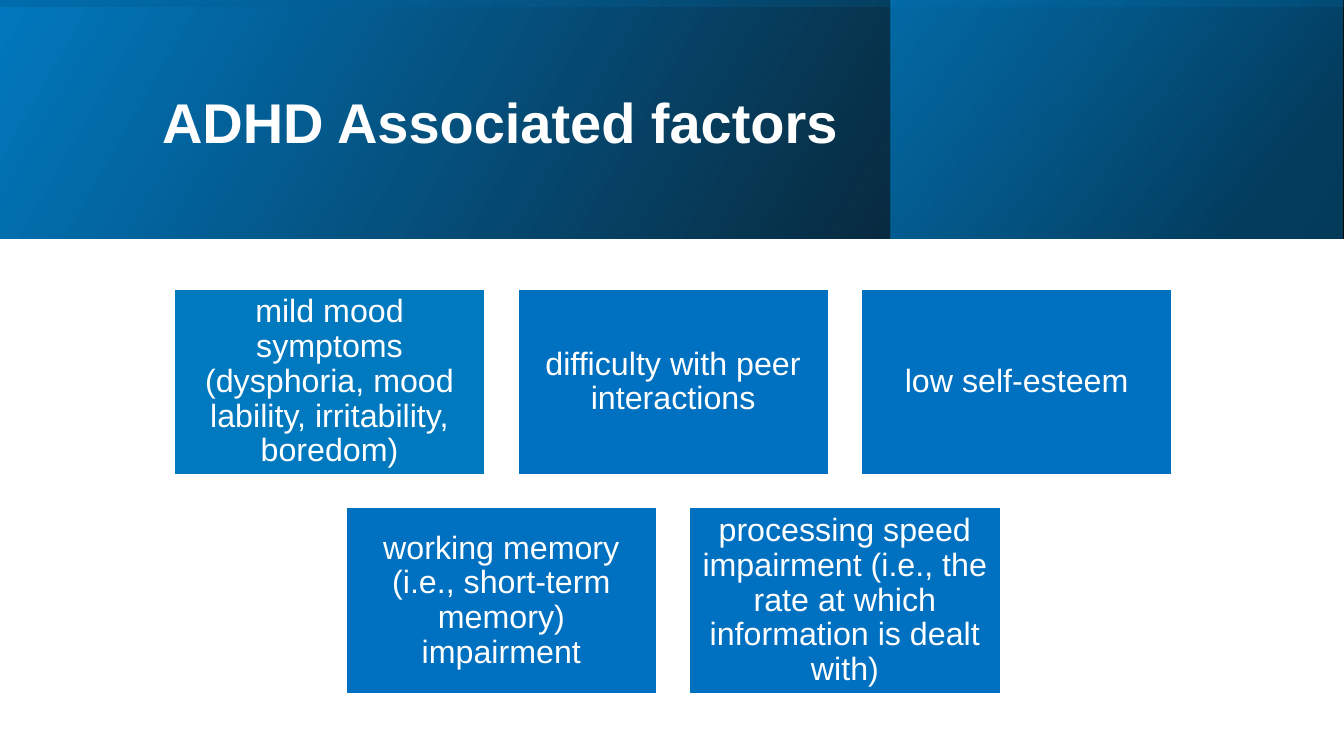
from pptx import Presentation
from pptx.dml.color import RGBColor
from pptx.enum.shapes import MSO_SHAPE
from pptx.enum.text import MSO_ANCHOR, PP_ALIGN
from pptx.oxml.ns import qn
from pptx.util import Pt
from lxml.etree import SubElement


def color(code):
    return RGBColor.from_string(code)


class Deck:
    """Holds the style and the current slide."""

    font = "Arial"
    white = "FFFFFF"

    def __init__(self, wide, high):
        self.prs = Presentation()
        self.prs.slide_width, self.prs.slide_height = Pt(wide), Pt(high)
        self.slide = self.prs.slides.add_slide(self.prs.slide_layouts[6])

    def rect(self, *area):
        shape = self.slide.shapes.add_shape(MSO_SHAPE.RECTANGLE, *map(Pt, area))
        shape.shadow.inherit = False
        return shape

    def band(self, area, angle, stops, turn=0):
        shape = self.rect(*area)
        shape.rotation = turn
        shape.line.fill.background()
        shape.fill.gradient()
        shape.fill.gradient_angle = 360 - angle
        props = shape._element.spPr
        props.find(qn("a:xfrm")).set("flipH", "1")
        for stop, (place, code, _) in zip(shape.fill.gradient_stops, stops):
            stop.position = place / 100
            stop.color.rgb = color(code)
        for node, (_, _, alpha) in zip(props.iter(qn("a:srgbClr")), stops):
            SubElement(node, qn("a:alpha")).set("val", str(alpha * 1000))

    def label(self, shape, text, size, align, bold=False):
        frame = shape.text_frame
        frame.word_wrap = True
        frame.vertical_anchor = MSO_ANCHOR.MIDDLE
        para = frame.paragraphs[0]
        para.alignment = align
        para.line_spacing = 0.9
        run = para.add_run()
        run.text = text
        run.font.name, run.font.size, run.font.bold = self.font, Pt(size), bold
        run.font.color.rgb = color(self.white)

    def title(self, area, text):
        box = self.slide.shapes.add_textbox(*map(Pt, area))
        self.label(box, text, 40, PP_ALIGN.LEFT, True)

    def card(self, area, text, fill):
        shape = self.rect(*area)
        shape.fill.solid()
        shape.fill.fore_color.rgb = color(fill)
        shape.line.color.rgb = color(self.white)
        shape.line.width = Pt(2)
        frame = shape.text_frame
        frame.margin_top = frame.margin_bottom = Pt(7)
        frame.margin_left = frame.margin_right = Pt(7)
        self.label(shape, text, 23, PP_ALIGN.CENTER)


def main():
    wide, high = 960, 170.6
    deck = Deck(wide, 540)
    deck.band((0, 0, wide, high), 330, [(0, "000000", 96), (100, "0079BF", 100)])
    deck.band((636.3, 0, 322.6, high), 320, [(19, "005180", 68), (100, "00A2FF", 48)])
    side = (wide - high) / 2
    deck.band((side, -side, high, wide), 350, [(23, "0079BF", 16), (99, "000000", 45)], 270)
    deck.title((108.7, 27.4, 765.4, 123.8), "ADHD Associated factors")

    rows = [
        ["mild mood symptoms (dysphoria, mood lability, irritability, boredom)",
         "difficulty with peer interactions",
         "low self-esteem"],
        ["working memory (i.e., short-term memory) impairment",
         "processing speed impairment (i.e., the rate at which information is dealt with)"],
    ]
    width, height, gap = 223, 133.8, 22.4
    step = width + gap
    for row, texts in enumerate(rows):
        left = 124 + row * step / 2
        top = 206 + row * (height + gap)
        for col, text in enumerate(texts):
            fill = "0079BF" if row == col == 0 else "0070C0"
            deck.card((left + col * step, top, width, height), text, fill)
    deck.prs.save("out.pptx")


if __name__ == "__main__":
    main()
